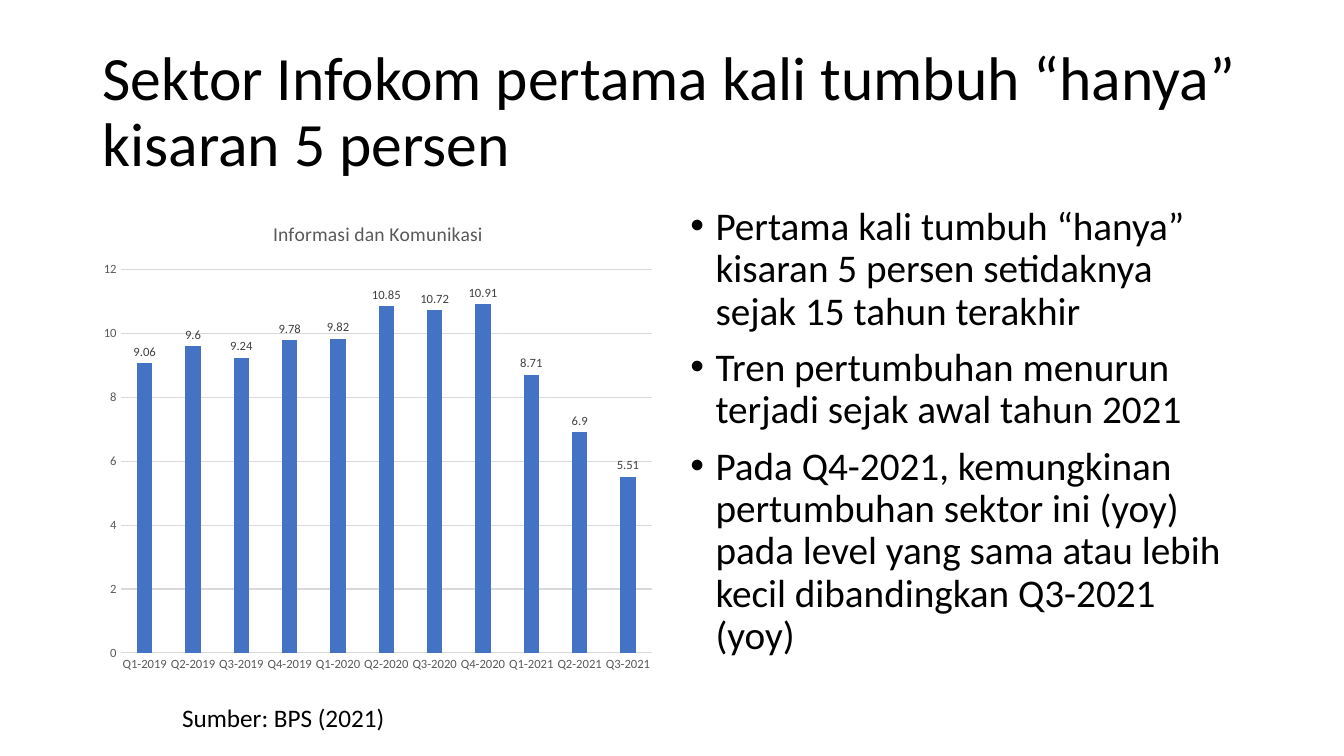
from lxml import etree
from pptx import Presentation
from pptx.chart.data import CategoryChartData
from pptx.dml.color import RGBColor
from pptx.enum.chart import XL_CHART_TYPE, XL_LABEL_POSITION, XL_TICK_MARK
from pptx.enum.text import MSO_ANCHOR, MSO_AUTO_SIZE, PP_ALIGN
from pptx.oxml.ns import qn
from pptx.util import Pt

COLUMNS = XL_CHART_TYPE.COLUMN_CLUSTERED
OUTSIDE_END = XL_LABEL_POSITION.OUTSIDE_END
NO_TICK = XL_TICK_MARK.NONE
MIDDLE = MSO_ANCHOR.MIDDLE
NO_FIT = MSO_AUTO_SIZE.NONE
LEFT = PP_ALIGN.LEFT

MARGIN, TOP, COL_W, COL_H = 66, 144, 408, 342.6
RIGHT_COL = 486
SECTOR = "Informasi dan Komunikasi"
QUARTERS = [f"Q{q}-{year}" for year in (2019, 2020, 2021) for q in (1, 2, 3, 4)][:11]
GROWTH = [9.06, 9.6, 9.24, 9.78, 9.82, 10.85, 10.72, 10.91, 8.71, 6.9, 5.51]
POINTS = [
    "Pertama kali tumbuh “hanya” kisaran 5 persen setidaknya sejak 15 tahun terakhir",
    "Tren pertumbuhan menurun terjadi sejak awal tahun 2021",
    "Pada Q4-2021, kemungkinan pertumbuhan sektor ini (yoy) pada level yang sama "
    "atau lebih kecil dibandingkan Q3-2021 (yoy)",
]


def rgb(color):
    return RGBColor.from_string(color)


def set_font(font, size, color="000000"):
    font.name, font.size, font.bold = "Calibri", Pt(size), False
    font.color.rgb = rgb(color)


prs = Presentation()
prs.slide_width, prs.slide_height = Pt(960), Pt(540)
s = prs.slides.add_slide(prs.slide_layouts[5])

# Title
title = s.shapes.title
title.left, title.top, title.width, title.height = Pt(MARGIN), Pt(28.8), Pt(828), Pt(104.4)
tf = title.text_frame
tf.text = "Sektor Infokom pertama kali tumbuh “hanya” kisaran 5 persen"
tf.auto_size, tf.vertical_anchor, tf.word_wrap = NO_FIT, MIDDLE, True
p = tf.paragraphs[0]
p.alignment, p.line_spacing = LEFT, 0.9
set_font(p.font, 44)

# Growth chart
data = CategoryChartData()
data.categories = QUARTERS
data.add_series(SECTOR, GROWTH)
chart = s.shapes.add_chart(COLUMNS, Pt(MARGIN), Pt(TOP), Pt(COL_W), Pt(COL_H), data).chart
set_font(chart.font, 10)
chart.has_legend = False
chart.has_title = True
chart.chart_title.include_in_layout = False
tf = chart.chart_title.text_frame
tf.text = SECTOR
set_font(tf.paragraphs[0].font, 14, "595959")

cat_axis, val_axis = chart.category_axis, chart.value_axis
for axis in (cat_axis, val_axis):
    axis.major_tick_mark = axis.minor_tick_mark = NO_TICK
    set_font(axis.tick_labels.font, 9, "595959")
val_axis.minimum_scale, val_axis.maximum_scale, val_axis.major_unit = 0, 12, 2
val_axis.format.line.fill.background()
for line in (cat_axis.format.line, val_axis.major_gridlines.format.line):
    line.color.rgb = rgb("D9D9D9")
    line.width = Pt(0.75)

plot = chart.plots[0]
plot.gap_width, plot.overlap, plot.vary_by_categories = 219, -27, False
fill = plot.series[0].format.fill
fill.solid()
fill.fore_color.rgb = rgb("4472C4")
labels = plot.series[0].data_labels
labels.show_value, labels.position = True, OUTSIDE_END
set_font(labels.font, 9, "404040")

# Bullet points
tf = s.shapes.add_textbox(Pt(RIGHT_COL), Pt(TOP), Pt(COL_W), Pt(COL_H)).text_frame
tf.word_wrap = True
for i, point in enumerate(POINTS):
    p = tf.add_paragraph() if i else tf.paragraphs[0]
    p.text = point
    p.line_spacing, p.space_before = 0.9, Pt(10)
    set_font(p.font, 28)
    pPr = p._p.get_or_add_pPr()
    pPr.set("marL", str(Pt(18)))
    pPr.set("indent", str(-Pt(18)))
    bullet_font = etree.Element(qn("a:buFont"), typeface="Arial")
    bullet = etree.Element(qn("a:buChar"), char="•")
    pPr.find(qn("a:spcBef")).addnext(bullet_font)
    bullet_font.addnext(bullet)

# Data source
tf = s.shapes.add_textbox(Pt(123), Pt(498), Pt(195), Pt(29)).text_frame
tf.word_wrap = True
tf.text = "Sumber: BPS (2021)"
set_font(tf.paragraphs[0].font, 18)

prs.save("out.pptx")
